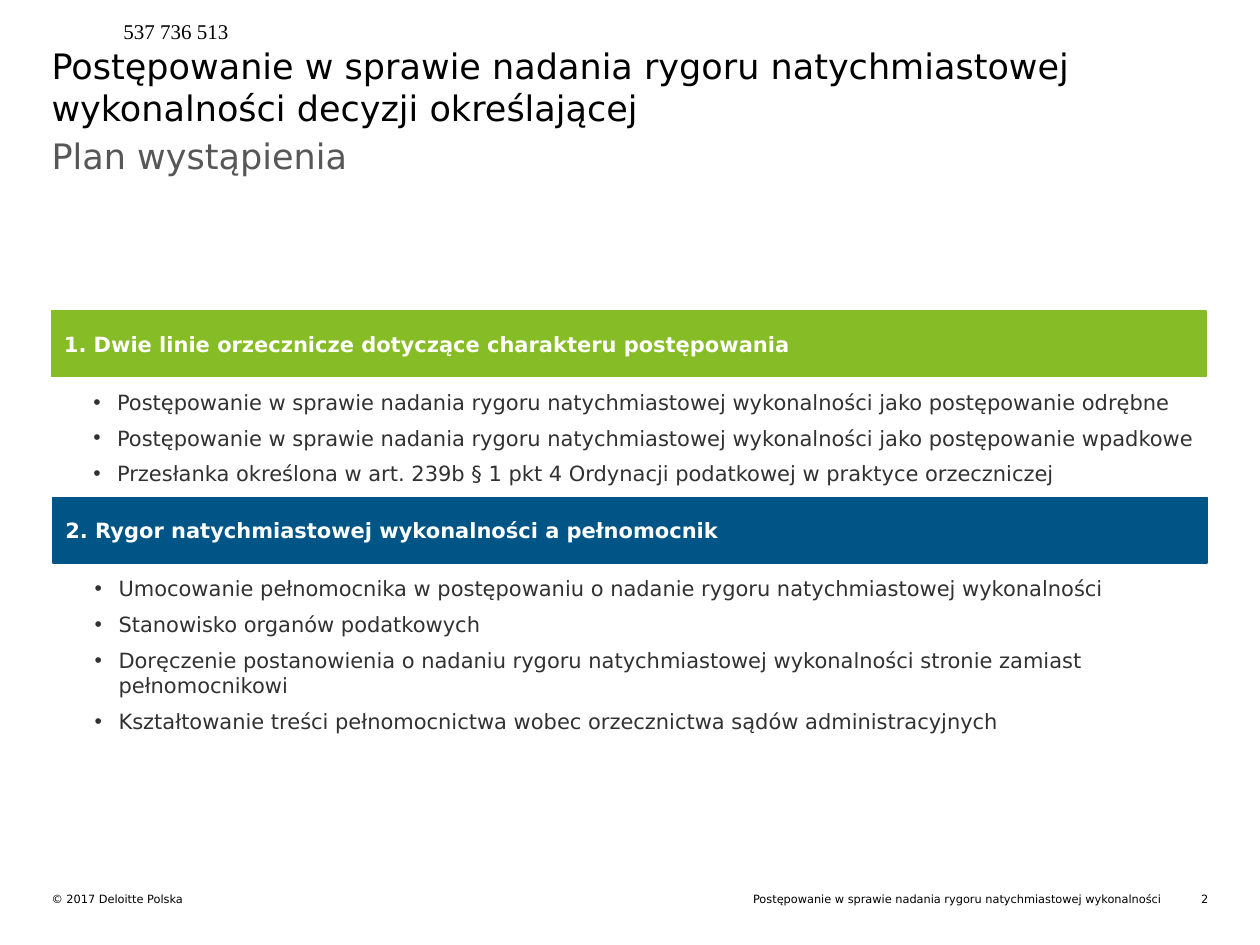
from lxml.etree import SubElement
from pptx import Presentation
from pptx.dml.color import RGBColor
from pptx.enum.shapes import MSO_SHAPE as Shape
from pptx.enum.text import MSO_ANCHOR as Anchor, MSO_AUTO_SIZE as AutoSize, PP_ALIGN as Align
from pptx.oxml.ns import qn
from pptx.util import Cm, Pt

LEFT = 1.04
WIDTH = 23.27
BAR_HEIGHT = 1.32

SECTIONS = [
    {
        "heading": "1. Dwie linie orzecznicze dotyczące charakteru postępowania",
        "color": "86BC25", "left": LEFT, "top": 6.27, "placeholder": 2,
        "items": [
            "Postępowanie w sprawie nadania rygoru natychmiastowej wykonalności jako postępowanie odrębne",
            "Postępowanie w sprawie nadania rygoru natychmiastowej wykonalności jako postępowanie wpadkowe",
            "Przesłanka określona w art. 239b § 1 pkt 4 Ordynacji podatkowej w praktyce orzeczniczej",
        ],
        "list_height": 1.96,
    },
    {
        "heading": "2. Rygor natychmiastowej wykonalności a pełnomocnik",
        "color": "005587", "left": 1.07, "top": 10.03, "placeholder": 4,
        "items": [
            "Umocowanie pełnomocnika w postępowaniu o nadanie rygoru natychmiastowej wykonalności",
            "Stanowisko organów podatkowych",
            "Doręczenie postanowienia o nadaniu rygoru natychmiastowej wykonalności stronie zamiast pełnomocnikowi",
            "Kształtowanie treści pełnomocnictwa wobec orzecznictwa sądów administracyjnych",
        ],
        "list_height": 3.2,
    },
]


def rgb(value):
    return RGBColor.from_string(value)


def set_bullet(paragraph, character):
    properties = paragraph._p.get_or_add_pPr()
    properties.set("marL", str(Cm(0.48)))
    properties.set("indent", str(-Cm(0.48)))
    SubElement(properties, qn("a:buChar"), char=character)


def clear_bullet(paragraph):
    properties = paragraph._p.get_or_add_pPr()
    properties.set("marL", "0")
    properties.set("indent", "0")
    SubElement(properties, qn("a:buNone"))


def write_text(shape, *lines, size=12, color="000000", font="DejaVu Sans", bold=False,
               align=Align.LEFT, anchor=Anchor.TOP, gap=0, bullet=None,
               inset=0, wrap=True):
    frame = shape.text_frame
    frame.auto_size = AutoSize.NONE
    frame.word_wrap = wrap
    frame.vertical_anchor = anchor
    frame.margin_left = Cm(inset)
    frame.margin_right = frame.margin_top = frame.margin_bottom = 0
    for index, line in enumerate(lines):
        paragraph = frame.paragraphs[0] if index == 0 else frame.add_paragraph()
        paragraph.alignment = align
        paragraph.space_before = Pt(gap if index else 0)
        if bullet:
            set_bullet(paragraph, bullet)
        else:
            clear_bullet(paragraph)
        run = paragraph.add_run()
        run.text = line
        run.font.name = font
        run.font.size = Pt(size)
        run.font.bold = bold
        run.font.color.rgb = rgb(color)


def place(shape, left, top, width, height):
    shape.left, shape.top = Cm(left), Cm(top)
    shape.width, shape.height = Cm(width), Cm(height)
    return shape


def add_label(slide, text, left, top, width, height, **text_format):
    box = slide.shapes.add_textbox(Cm(left), Cm(top), Cm(width), Cm(height))
    write_text(box, text, **text_format)


def add_bar(slide, text, left, top, color):
    bar = slide.shapes.add_shape(Shape.PENTAGON, Cm(left), Cm(top), Cm(WIDTH), Cm(BAR_HEIGHT))
    bar.adjustments[0] = 0
    bar.shadow.inherit = False
    bar.fill.solid()
    bar.fill.fore_color.rgb = rgb(color)
    bar.line.color.rgb = rgb(color)
    bar.line.width = Pt(1)
    write_text(bar, text, color="FFFFFF", bold=True, anchor=Anchor.MIDDLE, inset=0.25)


def add_section(slide, section):
    left, top = section["left"], section["top"]
    add_bar(slide, section["heading"], left, top, section["color"])
    body = place(slide.placeholders[section["placeholder"]],
                 left + 0.84, top + BAR_HEIGHT + 0.26, 22.43, section["list_height"])
    write_text(body, *section["items"], color="313131", bullet="•", gap=6)


def add_footer(slide):
    add_label(slide, "© 2017\u00a0Deloitte Polska", LEFT, 17.98, 11.15, 0.56, size=6.5)
    add_label(slide, "Postępowanie w sprawie nadania rygoru natychmiastowej wykonalności",
              13.21, 17.98, 10.21, 0.56, size=6.5, align=Align.RIGHT)
    add_label(slide, "2", 23.72, 17.98, 0.64, 0.28, size=6.5, align=Align.RIGHT)


def main():
    presentation = Presentation()
    presentation.slide_width, presentation.slide_height = Cm(25.4), Cm(19.05)
    slide = presentation.slides.add_slide(presentation.slide_layouts.get_by_name("Comparison"))
    unused = slide.placeholders[3]._element
    unused.getparent().remove(unused)

    write_text(place(slide.shapes.title, LEFT, 0.89, WIDTH, 0.94),
               "Postępowanie w sprawie nadania rygoru natychmiastowej wykonalności decyzji określającej",
               size=20)
    write_text(place(slide.placeholders[1], LEFT, 2.72, WIDTH, 0.94),
               "Plan wystąpienia", size=20, color="575757")
    for section in SECTIONS:
        add_section(slide, section)
    add_footer(slide)
    add_label(slide, "537 736 513", 0, 0, 25.4, 1.27, font="Times New Roman",
              anchor=Anchor.MIDDLE, inset=2.49, wrap=False)
    presentation.save("out.pptx")


if __name__ == "__main__":
    main()
